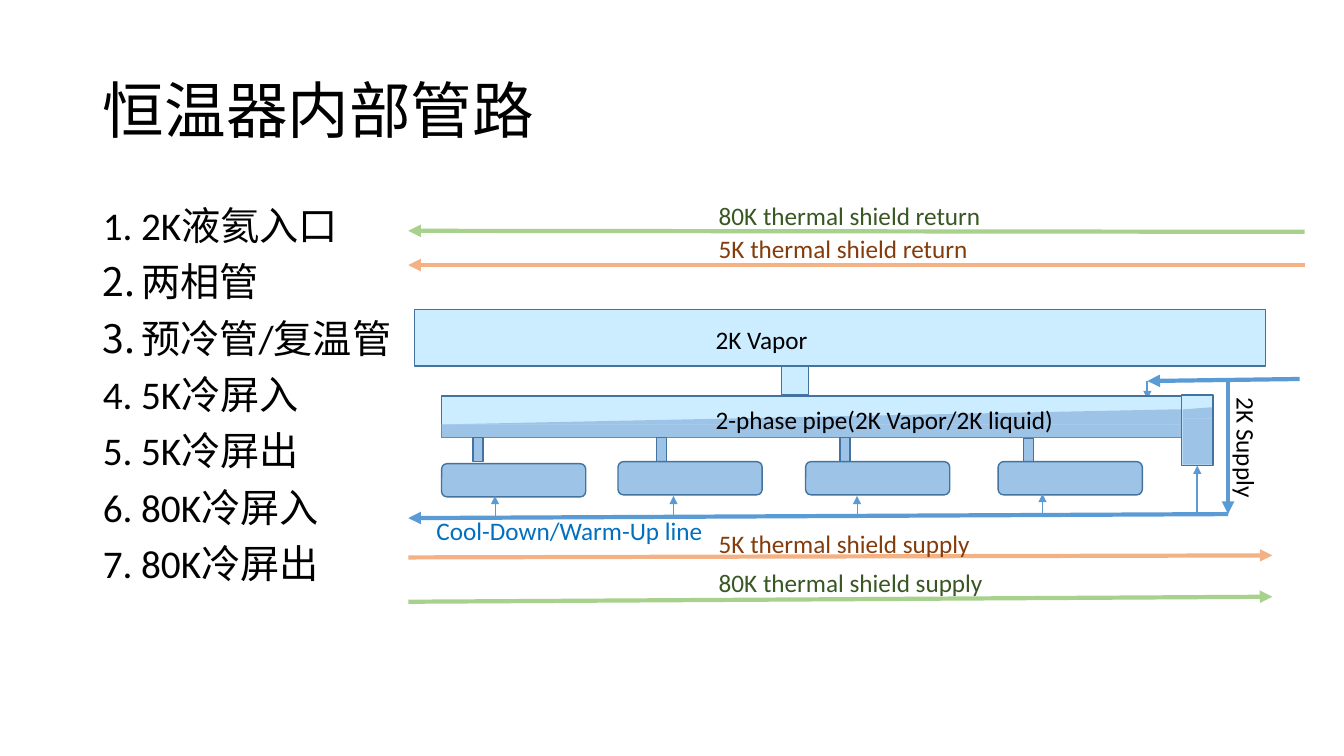
from lxml import etree
from pptx import Presentation
from pptx import util as u
from pptx.dml import color
from pptx.enum import shapes, text
from pptx.oxml import ns

COLORS = {
    "black": "000000", "vapor": "CCECFF", "liquid": "9DC3E6", "outline": "43739E",
    "helium": "5B9BD5", "cooldown": "0070C0", "shield_5k": "F4B183",
    "shield_80k": "A9D18E", "label_5k": "843C0B", "label_80k": "385723",
}
PIPES = ["2K液氦入口", "两相管", "预冷管/复温管", "5K冷屏入", "5K冷屏出", "80K冷屏入", "80K冷屏出"]
KIND = shapes.MSO_SHAPE


def rgb(name):
    return color.RGBColor.from_string(COLORS[name])


def add_run(paragraph, words, size, color_name):
    run = paragraph.add_run()
    run.text = words
    run.font.size = u.Pt(size)
    run.font.name = "Calibri"
    run.font.color.rgb = rgb(color_name)


def place(shape, left, top, width, height):
    shape.left, shape.top = u.Inches(left), u.Inches(top)
    shape.width, shape.height = u.Inches(width), u.Inches(height)


def add_part(parent, left, top, width, height, fill, kind=KIND.RECTANGLE, outlined=True):
    box = [u.Inches(value) for value in (left, top, width, height)]
    shape = parent.add_shape(kind, *box)
    shape.shadow.inherit = False
    shape.fill.solid()
    shape.fill.fore_color.rgb = rgb(fill)
    if outlined:
        shape.line.color.rgb = rgb("outline")
        shape.line.width = u.Pt(1)
    else:
        shape.line.fill.background()
    return shape


def add_arrow(parent, start, end, color_name, weight):
    points = [u.Inches(value) for value in (*start, *end)]
    arrow = parent.add_connector(shapes.MSO_CONNECTOR.STRAIGHT, *points)
    arrow.line.color.rgb = rgb(color_name)
    arrow.line.width = u.Pt(weight)
    line = arrow.line._get_or_add_ln()
    etree.SubElement(line, ns.qn("a:tailEnd"), type="triangle")
    etree.SubElement(arrow._element.spPr, ns.qn("a:effectLst"))
    return arrow


def add_label(parent, left, top, words, color_name="black", width=3.15):
    box = [u.Inches(value) for value in (left, top, width, 0.4)]
    label = parent.add_textbox(*box)
    label.text_frame.word_wrap = True
    label.text_frame.auto_size = text.MSO_AUTO_SIZE.SHAPE_TO_FIT_TEXT
    add_run(label.text_frame.paragraphs[0], words, 18, color_name)
    return label


def fill_title(title, left, top, width, height):
    place(title, left, top, width, height)
    title.text_frame.vertical_anchor = text.MSO_ANCHOR.MIDDLE
    title.text_frame.auto_size = text.MSO_AUTO_SIZE.NONE
    paragraph = title.text_frame.paragraphs[0]
    paragraph.alignment = text.PP_ALIGN.LEFT
    paragraph.line_spacing = 0.9
    add_run(paragraph, "恒温器内部管路", 44, "black")


def fill_pipe_list(body, left, top, width, height):
    place(body, left, top, width, height)
    frame = body.text_frame
    frame.auto_size = text.MSO_AUTO_SIZE.NONE
    for index, name in enumerate(PIPES):
        paragraph = frame.add_paragraph() if index else frame.paragraphs[0]
        paragraph.line_spacing = 0.9
        paragraph.space_before = u.Pt(10)
        add_run(paragraph, name, 28, "black")
        properties = paragraph._p.get_or_add_pPr()
        properties.set("marL", str(u.Inches(0.38)))
        properties.set("indent", str(-u.Inches(0.38)))
        etree.SubElement(properties, ns.qn("a:buFont"), typeface="+mj-lt")
        etree.SubElement(properties, ns.qn("a:buAutoNum"), type="arabicPeriod")


def draw_shield_returns(parent, left, top, width):
    right = left + width
    add_arrow(parent, (right, top + 0.01), (left, top), "shield_80k", 3)
    add_arrow(parent, (right, top + 0.34), (left, top + 0.34), "shield_5k", 3)
    add_label(parent, left + 2.98, top - 0.35, "80K thermal shield return", "label_80k")
    add_label(parent, left + 2.98, top - 0.02, "5K thermal shield return", "label_5k")


def draw_shield_supplies(parent, left, top, width):
    right = left + width
    add_arrow(parent, (left, top + 0.02), (right, top), "shield_5k", 3)
    add_arrow(parent, (left, top + 0.46), (right, top + 0.41), "shield_80k", 3)
    add_label(parent, left + 2.98, top - 0.32, "5K thermal shield supply", "label_5k")
    add_label(parent, left + 2.98, top + 0.07, "80K thermal shield supply", "label_80k")


def draw_vapor_pipe(parent, left, top, width, height):
    add_part(parent, left, top, width, height, "vapor")
    add_part(parent, left + 3.64, top + height, 0.27, 0.29, "vapor")
    add_label(parent, left + 2.89, top + 0.1, "2K Vapor")


def draw_two_phase_pipe(parent, left, top, width, height):
    pipe = parent.add_group_shape().shapes
    add_part(pipe, left, top, width, height, "vapor")
    slope = add_part(pipe, left + 0.04, top + 0.13, width - 0.04, 0.15, "liquid",
                     KIND.RIGHT_TRIANGLE, outlined=False)
    slope._element.spPr.xfrm.set("flipH", "1")
    add_part(pipe, left, top + 0.28, width, height - 0.28, "liquid", outlined=False)
    add_label(parent, left + 2.62, top + 0.03, "2-phase pipe(2K Vapor/2K liquid)", width=3.71)


def draw_cavities(parent, left, top):
    cavities = [(0, 0.02, 0.53), (1.75, 0, 2.3), (3.61, 0, 4.12), (5.52, 0, 5.96)]
    for index, (offset, drop, inlet) in enumerate(cavities):
        last = index == len(cavities) - 1
        neck_top = top - (0.23 if last else 0.24)
        line_top = top + (0.52 if last else 0.54)
        add_part(parent, left + 0.31 + 1.82 * index, neck_top, 0.1, 0.24, "liquid")
        add_part(parent, left + offset, top + drop, 1.43, 0.33, "liquid", KIND.ROUNDED_RECTANGLE)
        add_arrow(parent, (left + inlet, line_top), (left + inlet, line_top - 0.2), "helium", 0.5)


def draw_liquid_tank(parent, left, top, width, height):
    tank = add_part(parent, left, top, width, height, "vapor")
    inlet = left + width / 2
    arrow = add_arrow(parent, (inlet, top + 1.19), (inlet, top + height), "helium", 1.5)
    arrow.end_connect(tank, 2)
    add_part(parent, left + 0.01, top + 0.12, 0.29, 0.11, "liquid",
             KIND.FLOWCHART_MANUAL_INPUT, outlined=False)
    add_part(parent, left + 0.01, top + 0.23, 0.29, 0.46, "liquid", outlined=False)


def draw_helium_supply(parent, left, top, width, height):
    branch, inlet, bottom = left + 8.13, left + 7.33, top + height
    add_arrow(parent, (branch, bottom - 0.04), (left, bottom), "helium", 3)
    add_arrow(parent, (branch, top), (branch, bottom - 0.04), "helium", 3)
    add_arrow(parent, (left + width, top), (inlet, top + 0.02), "helium", 3)
    add_arrow(parent, (inlet, top + 0.02), (inlet, top + 0.2), "helium", 1.5)
    add_label(parent, left + 0.18, bottom - 0.08, "Cool-Down/Warm-Up line", "cooldown")
    add_label(parent, left + 6.74, top + 1.46, "2K Supply").rotation = 90


def main():
    presentation = Presentation()
    presentation.slide_width = u.Inches(13.33)
    presentation.slide_height = u.Inches(7.5)
    slide = presentation.slides.add_slide(presentation.slide_layouts[1])
    fill_title(slide.shapes.title, 0.92, 0.4, 11.5, 1.45)
    fill_pipe_list(slide.placeholders[1], 0.92, 2, 11.5, 4.76)
    draw_helium_supply(slide.shapes, 4.05, 3.76, 8.84, 1.38)
    draw_shield_returns(slide.shapes, 4.05, 2.29, 8.89)
    draw_shield_supplies(slide.shapes, 4.05, 5.51, 8.57)
    draw_vapor_pipe(slide.shapes, 4.11, 3.07, 8.44, 0.56)
    draw_two_phase_pipe(slide.shapes, 4.38, 3.93, 7.34, 0.41)
    draw_cavities(slide.shapes, 4.38, 4.58)
    draw_liquid_tank(slide.shapes, 11.72, 3.92, 0.31, 0.7)
    presentation.save("out.pptx")


if __name__ == "__main__":
    main()
